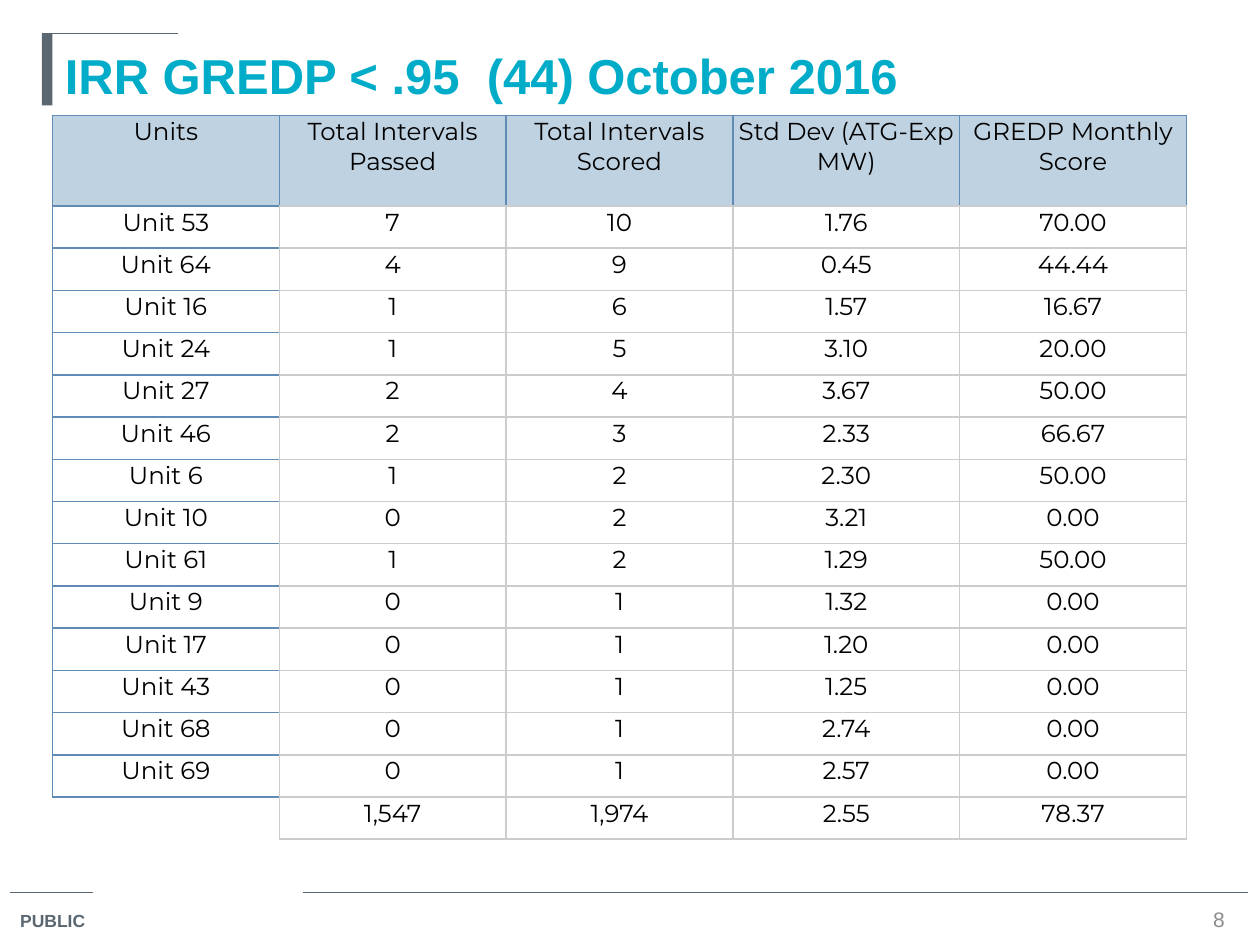
from lxml import etree
from pptx import Presentation
from pptx.dml.color import RGBColor
from pptx.enum.shapes import MSO_CONNECTOR, MSO_SHAPE
from pptx.enum.text import MSO_ANCHOR, PP_ALIGN
from pptx.oxml.ns import qn
from pptx.util import Pt

STRAIGHT = MSO_CONNECTOR.STRAIGHT
RECTANGLE = MSO_SHAPE.RECTANGLE
TOP, MIDDLE = MSO_ANCHOR.TOP, MSO_ANCHOR.MIDDLE
LEFT, CENTER = PP_ALIGN.LEFT, PP_ALIGN.CENTER

SLATE, TEAL, GRAY = "5B6770", "00ACC8", "8C8C8C"
BLUE, PALE_BLUE, SILVER = "608BB4", "BFD2E2", "CCCCCC"

HEADINGS = ["Units", "Total Intervals Passed", "Total Intervals Scored",
            "Std Dev (ATG-Exp MW)", "GREDP Monthly Score"]
UNITS = [
    ("Unit 53", "7", "10", "1.76", "70.00"),
    ("Unit 64", "4", "9", "0.45", "44.44"),
    ("Unit 16", "1", "6", "1.57", "16.67"),
    ("Unit 24", "1", "5", "3.10", "20.00"),
    ("Unit 27", "2", "4", "3.67", "50.00"),
    ("Unit 46", "2", "3", "2.33", "66.67"),
    ("Unit 6", "1", "2", "2.30", "50.00"),
    ("Unit 10", "0", "2", "3.21", "0.00"),
    ("Unit 61", "1", "2", "1.29", "50.00"),
    ("Unit 9", "0", "1", "1.32", "0.00"),
    ("Unit 17", "0", "1", "1.20", "0.00"),
    ("Unit 43", "0", "1", "1.25", "0.00"),
    ("Unit 68", "0", "1", "2.74", "0.00"),
    ("Unit 69", "0", "1", "2.57", "0.00"),
]
TOTALS = ("", "1,547", "1,974", "2.55", "78.37")


def color(value):
    return RGBColor.from_string(value)


def set_font(p, size, name, value, bold=False):
    p.font.size = Pt(size)
    p.font.name = name
    p.font.bold = bold
    p.font.color.rgb = color(value)


def add_rule(s, x, y, width):
    line = s.shapes.add_connector(STRAIGHT, Pt(x), Pt(y), Pt(x + width), Pt(y))
    line.line.color.rgb = color(SLATE)
    line.line.width = Pt(0.75)
    etree.SubElement(line._element.spPr, qn("a:effectLst"))


def add_text(s, box, text, size, value, bold=False, align=LEFT, anchor=TOP, wrap=True):
    sp = s.shapes.add_textbox(*map(Pt, box))
    tf = sp.text_frame
    tf.word_wrap = wrap
    tf.vertical_anchor = anchor
    p = tf.paragraphs[0]
    p.text = text
    p.alignment = align
    set_font(p, size, "Arial", value, bold)


def add_header(s, x, y, width, height):
    bar = s.shapes.add_shape(RECTANGLE, Pt(x), Pt(y), Pt(6), Pt(41))
    bar.shadow.inherit = False
    bar.fill.solid()
    bar.fill.fore_color.rgb = color(SLATE)
    bar.line.fill.background()
    add_rule(s, x, y, 78)
    add_text(s, (x + 6, y, width - 6, height), "IRR GREDP < .95  (44) October 2016",
             28, TEAL, bold=True, anchor=MIDDLE)


def set_borders(cell, left, right, top, bottom):
    tcPr = cell._tc.get_or_add_tcPr()
    sides = zip(("a:lnL", "a:lnR", "a:lnT", "a:lnB"), (left, right, top, bottom))
    for i, (tag, value) in enumerate(sides):
        ln = etree.Element(qn(tag), w=str(Pt(1)))
        if value:
            fill = etree.SubElement(ln, qn("a:solidFill"))
            etree.SubElement(fill, qn("a:srgbClr"), val=value)
        else:
            etree.SubElement(ln, qn("a:noFill"))
        tcPr.insert(i, ln)


def cell_borders(row, col, last):
    if row == 0:
        return BLUE, BLUE, BLUE, SILVER if col else BLUE
    if col:
        return SILVER, SILVER, SILVER, SILVER
    if row == last:
        return None, SILVER, BLUE, None
    return BLUE, SILVER, BLUE, BLUE


def add_scores(s, x, y, width, height):
    rows = [HEADINGS, *UNITS, TOTALS]
    last = len(rows) - 1
    header_height = 51.75
    row_height = (height - header_height) / last
    table = s.shapes.add_table(len(rows), len(HEADINGS), Pt(x), Pt(y),
                               Pt(width), Pt(height)).table
    table.first_row = False
    table.horz_banding = False
    for column in table.columns:
        column.width = Pt(width / len(HEADINGS))
    for i, values in enumerate(rows):
        table.rows[i].height = Pt(row_height if i else header_height)
        for j, text in enumerate(values):
            cell = table.cell(i, j)
            cell.margin_left = cell.margin_right = cell.margin_top = Pt(0.75)
            cell.margin_bottom = Pt(0)
            if i == 0:
                cell.fill.solid()
                cell.fill.fore_color.rgb = color(PALE_BLUE)
            else:
                cell.fill.background()
            set_borders(cell, *cell_borders(i, j, last))
            p = cell.text_frame.paragraphs[0]
            if text:
                p.text = text
            p.alignment = CENTER
            set_font(p, 14, "Montserrat", "000000")


def add_footer(s, x, y, width):
    add_rule(s, x, y, 47)
    add_rule(s, x + 167, y, width - 167)
    add_text(s, (x - 1.5, y + 6.5, 55.5, 20), "PUBLIC", 10, SLATE, bold=True, wrap=False)
    add_text(s, (x + width - 34.5, y + 7, 36, 16.5), "8", 12, GRAY,
             align=CENTER, anchor=MIDDLE)


def main():
    prs = Presentation()
    prs.slide_width, prs.slide_height = Pt(720), Pt(540)
    s = prs.slides.add_slide(prs.slide_layouts[6])
    add_footer(s, 6, 510, 707)
    add_header(s, 24, 19.25, 672, 47)
    add_scores(s, 30, 66, 648, 414)
    prs.save("out.pptx")


if __name__ == "__main__":
    main()
